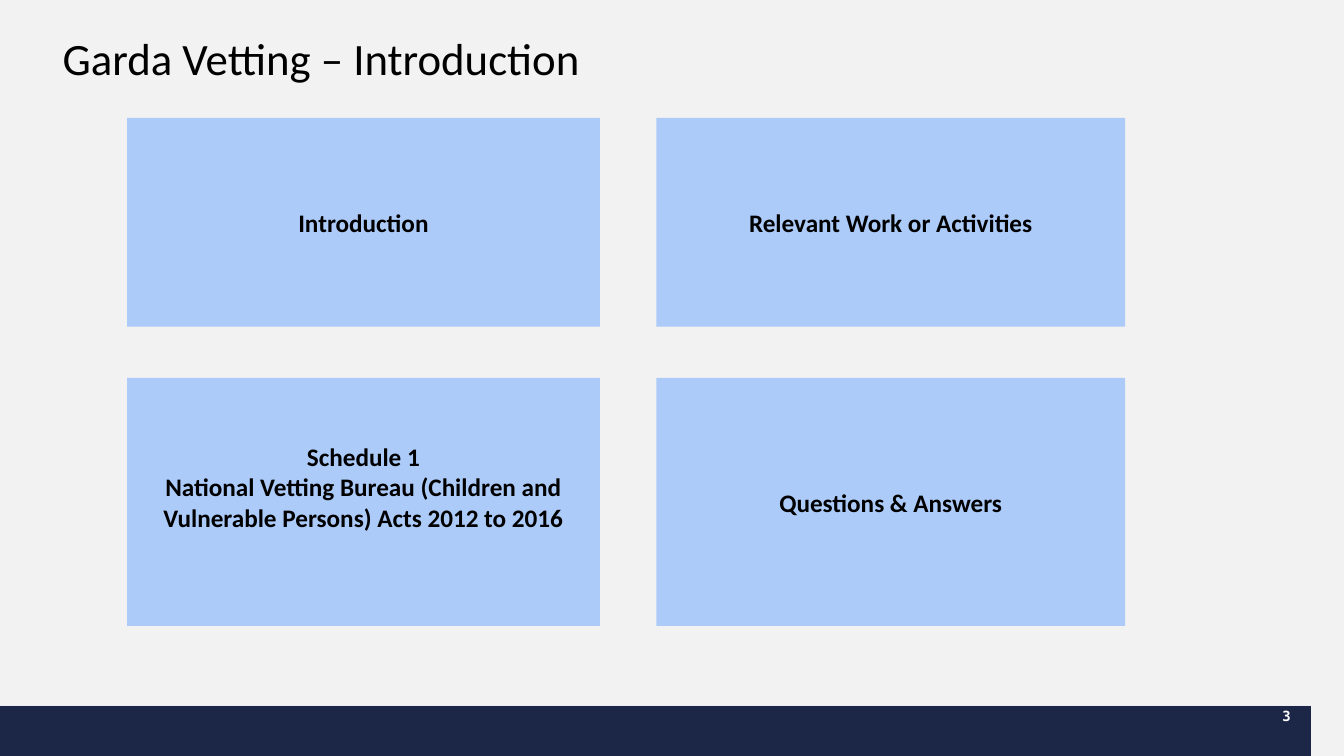
"""Build the Garda Vetting introduction slide."""
from pptx import Presentation
from pptx.dml.color import RGBColor
from pptx.enum.text import MSO_ANCHOR, PP_ALIGN
from pptx.util import Inches, Pt

TITLE = "Garda Vetting – Introduction"
PAGE = "3"
CARDS = [
    [["Introduction"], ["Relevant Work or Activities"]],
    [["Schedule 1",
      "National Vetting Bureau (Children and Vulnerable Persons) Acts 2012 to 2016"],
     ["Questions & Answers"]],
]
COLS = [(1.26, 4.69), (6.51, 4.65)]
ROWS = [(1.17, 2.07), (3.75, 2.46)]
LIFT = 0.3

BLACK = RGBColor(0x00, 0x00, 0x00)
WHITE = RGBColor(0xFF, 0xFF, 0xFF)
PAPER = RGBColor(0xF2, 0xF2, 0xF2)
CARD = RGBColor(0xAC, 0xCB, 0xF9)
PALE = RGBColor(0xBF, 0xDB, 0xFF)
BLUE = RGBColor(0x33, 0x66, 0x99)
NAVY = RGBColor(0x1C, 0x27, 0x47)

WIDE, HIGH = 13.33, 7.5
BANDS = [
    (PALE, [(WIDE, 6.72), (WIDE, 7.27), (6.98, 7.49), (0, 7.49), (0, 7.18)]),
    (BLUE, [(WIDE, 7), (WIDE, HIGH), (0, HIGH), (0, 7.23)]),
    (NAVY, [(0, 7.28), (WIDE, 7.28), (WIDE, HIGH), (0, HIGH)]),
]


def paint(shape, color):
    """Give a shape a flat fill with no line or shadow."""
    shape.shadow.inherit = False
    shape.fill.solid()
    shape.fill.fore_color.rgb = color
    shape.line.fill.background()


def write(shape, lines, size, color, align, face="Calibri", bold=True):
    """Put formatted lines of text in a shape."""
    frame = shape.text_frame
    frame.text = "\n".join(lines)
    frame.word_wrap = True
    frame.vertical_anchor = MSO_ANCHOR.MIDDLE
    for para in frame.paragraphs:
        para.alignment = align
        for run in para.runs:
            font = run.font
            font.name, font.size, font.bold = face, Pt(size), bold
            font.color.rgb = color
    return frame


def place(shape, *box):
    """Move and size a shape in inches."""
    shape.left, shape.top, shape.width, shape.height = map(Inches, box)


def main():
    """Draw and save the slide."""
    deck = Presentation()
    deck.slide_width, deck.slide_height = Inches(WIDE), Inches(HIGH)
    slide = deck.slides.add_slide(deck.slide_layouts[5])
    slide.background.fill.solid()
    slide.background.fill.fore_color.rgb = PAPER
    shapes = slide.shapes

    for color, points in BANDS:
        pen = shapes.build_freeform(*points[0], scale=Inches(1))
        pen.add_line_segments(points[1:], close=True)
        paint(pen.convert_to_shape(), color)

    place(shapes.title, 0.52, 0.2, 11.5, 0.8)
    frame = write(shapes.title, [TITLE], 32, BLACK, PP_ALIGN.LEFT, bold=False)
    frame.paragraphs[0].line_spacing = 0.9

    for (top, high), row in zip(ROWS, CARDS):
        for (left, wide), lines in zip(COLS, row):
            card = shapes.add_shape(1, *map(Inches, (left, top, wide, high)))
            paint(card, CARD)
            frame = write(card, lines, 18, BLACK, PP_ALIGN.CENTER)
            if len(lines) > 1:
                frame.margin_bottom += Inches(LIFT)

    page = shapes.add_textbox(*map(Inches, (9.9, 6.9, 3, 0.4)))
    write(page, [PAGE], 10, WHITE, PP_ALIGN.RIGHT, "DejaVu Sans Mono")
    deck.save("out.pptx")


if __name__ == "__main__":
    main()
